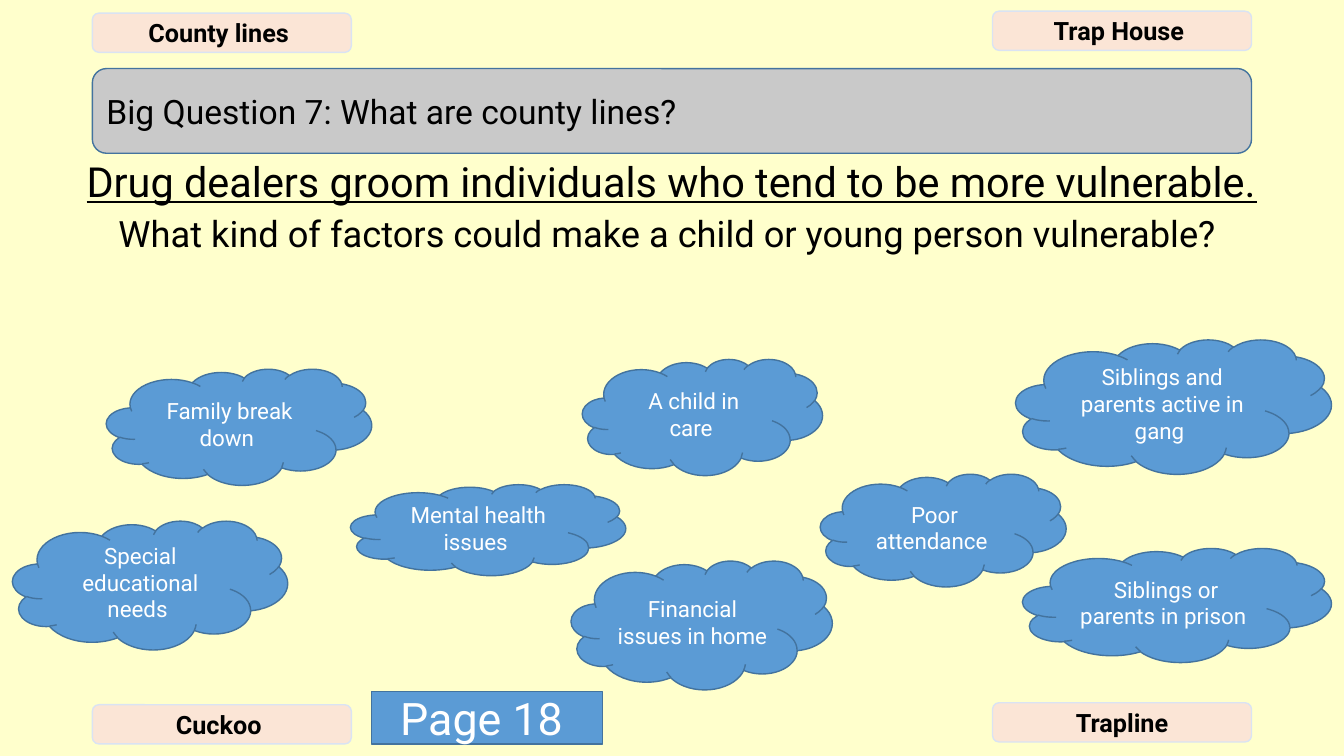
from pptx import Presentation
from pptx import util as u
from pptx.dml import color
from pptx.enum import shapes, text

COLOURS = {
    "page": "FFFFCC",
    "banner": "C9C9C9",
    "tag": "FBE5D6",
    "tag_edge": "DAE3F3",
    "blue": "5B9BD5",
    "blue_edge": "43739E",
    "ink": "000000",
    "white": "FFFFFF",
}
FONT = "Roboto"
KIND = shapes.MSO_SHAPE


def rgb(name):
    return color.RGBColor.from_string(COLOURS[name])


def style(paragraph, size, ink, bold=False, underline=False,
          align=text.PP_ALIGN.CENTER):
    paragraph.alignment = align
    for run in paragraph.runs:
        run.font.name = FONT
        run.font.size = u.Pt(size)
        run.font.bold = bold
        run.font.underline = underline
        run.font.color.rgb = rgb(ink)


def panel(slide, kind, box, wording, fill, edge, size, ink, **looks):
    shape = slide.shapes.add_shape(kind, *map(u.Pt, box))
    shape.shadow.inherit = False
    shape.fill.solid()
    shape.fill.fore_color.rgb = rgb(fill)
    shape.line.color.rgb = rgb(edge)
    shape.line.width = u.Pt(1)
    frame = shape.text_frame
    frame.word_wrap = True
    frame.vertical_anchor = text.MSO_ANCHOR.MIDDLE
    frame.text = wording
    style(frame.paragraphs[0], size, ink, **looks)


def banner(slide, box):
    panel(slide, KIND.ROUNDED_RECTANGLE, box,
          "Big Question 7: What are county lines?", "banner", "blue_edge",
          24, "ink", align=text.PP_ALIGN.LEFT)


def key_terms(slide, box):
    left, top, width, height = box
    tag_width, tag_height, right_lift = 185, 28, 1.4
    rows = [("County lines ", "Trap House "), ("Cuckoo ", "Trapline")]
    for row, terms in enumerate(rows):
        for column, term in enumerate(terms):
            x = left + column * (width - tag_width)
            y = top + row * (height - tag_height) - column * right_lift
            panel(slide, KIND.ROUNDED_RECTANGLE,
                  (x, y, tag_width, tag_height), term,
                  "tag", "tag_edge", 18, "ink", bold=True)


def prompt(slide, box):
    frame = slide.shapes.add_textbox(*map(u.Pt, box)).text_frame
    frame.word_wrap = True
    statement = frame.paragraphs[0]
    statement.text = ("Drug dealers groom individuals who tend to be "
                      "more vulnerable.")
    style(statement, 29.6, "ink", underline=True)
    question = frame.add_paragraph()
    question.text = ("What kind of factors could make a child or young "
                     "person vulnerable? ")
    question.space_before = u.Pt(10)
    style(question, 25.9, "ink")
    for paragraph in frame.paragraphs:
        paragraph.line_spacing = 0.8


def factors(slide, box):
    left, top = box[:2]
    clouds = [
        ("Family break down ", 67, 21, 189.5, 83),
        ("A child in care ", 407, 14, 171.5, 83),
        ("Financial issues in home ", 399, 158, 186.5, 92),
        ("Siblings or parents in prison ", 721.5, 149, 220.5, 81.5),
        ("Siblings and parents active in gang ", 716.5, 0, 225.5, 96),
        ("Special educational needs ", 0, 129.5, 196.5, 92),
        ("Poor attendance ", 577, 96, 175.5, 80.5),
        ("Mental health issues ", 241.5, 103.5, 196.5, 65),
    ]
    for factor, x, y, width, height in clouds:
        panel(slide, KIND.CLOUD, (left + x, top + y, width, height), factor,
              "blue", "blue_edge", 16, "white")


def page_label(slide, box):
    panel(slide, KIND.RECTANGLE, box, "Page 18 ", "blue", "blue_edge",
          32, "white")


def main():
    deck = Presentation()
    deck.slide_width, deck.slide_height = u.Pt(960), u.Pt(540)
    slide = deck.slides.add_slide(deck.slide_layouts[6])
    slide.background.fill.solid()
    slide.background.fill.fore_color.rgb = rgb("page")
    banner(slide, (66, 49, 828, 60.5))
    key_terms(slide, (66, 9.4, 828, 522))
    prompt(slide, (0, 115, 960, 125))
    factors(slide, (9, 242.5, 942, 250))
    page_label(slide, (265.5, 494, 165, 37.5))
    deck.save("out.pptx")


if __name__ == "__main__":
    main()
